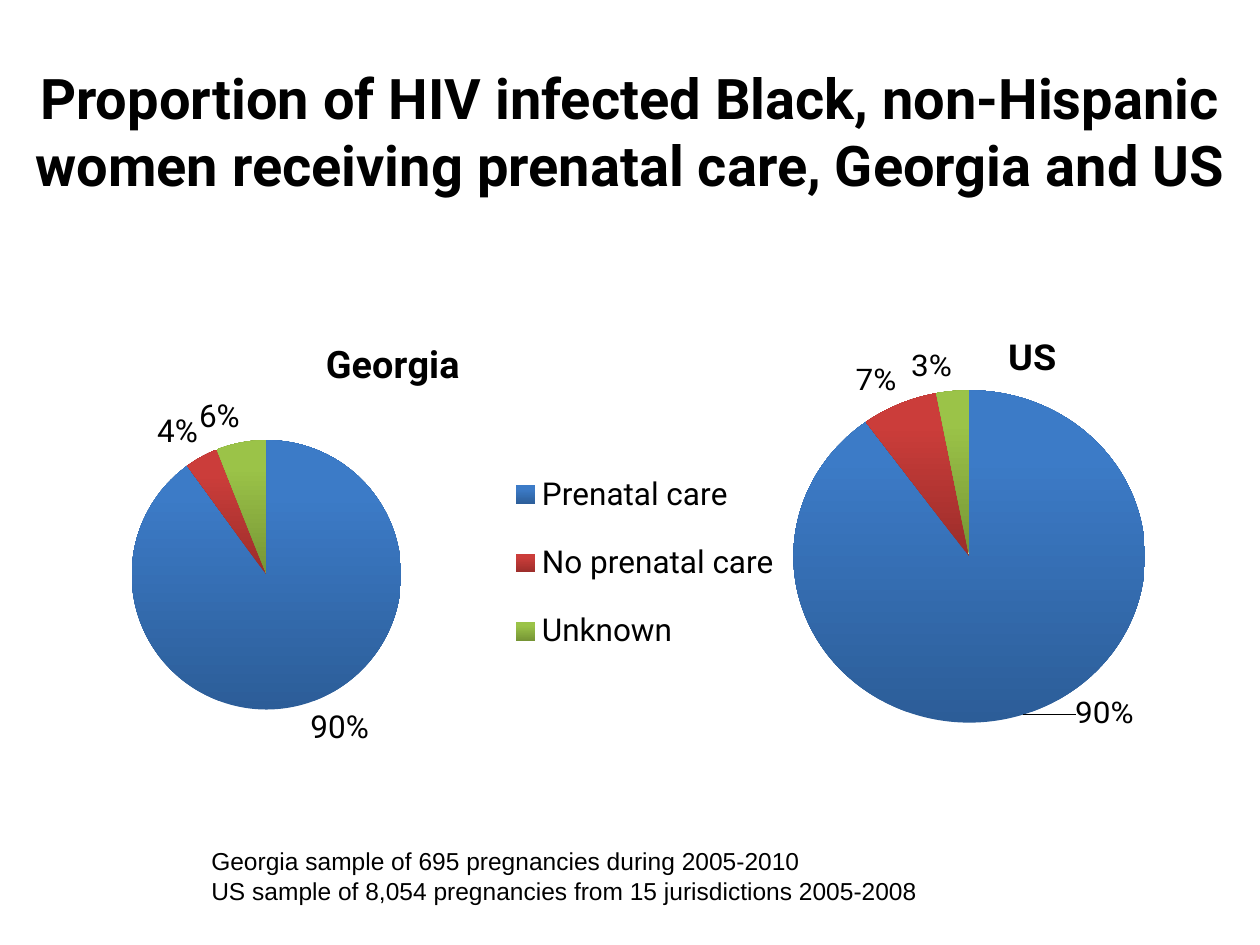
from lxml import etree
from pptx import Presentation
from pptx import util as u
from pptx.chart.data import CategoryChartData
from pptx.dml.color import RGBColor
from pptx.enum import chart as ch, text
from pptx.oxml import parse_xml
from pptx.oxml.ns import nsdecls, qn

BLACK = RGBColor(0, 0, 0)
# Dark and light ends of each slice's gradient
SLICES = (
    (RGBColor(0x2C, 0x5D, 0x98), RGBColor(0x3C, 0x7B, 0xC7)),
    (RGBColor(0x9B, 0x2D, 0x2A), RGBColor(0xCB, 0x3D, 0x3A)),
    (RGBColor(0x76, 0x95, 0x35), RGBColor(0x9B, 0xC3, 0x48)),
)


def style(obj, **vals):
    for key, val in vals.items():
        setattr(obj, key, val)


def ink(font, **vals):
    style(font, **vals)
    font.color.rgb = BLACK


def add_text(slide, box, lines, size, face, bold=False, **frame):
    """Text box with one paragraph for each line."""
    tf = slide.shapes.add_textbox(*map(u.Cm, box)).text_frame
    style(tf, word_wrap=True, **frame)
    for i, line in enumerate(lines):
        para = tf.add_paragraph() if i else tf.paragraphs[0]
        para.text = line
        ink(para.font, size=u.Pt(size), name=face, bold=bold)
    return tf


def layout(inner=False, **place):
    """Manual layout, in fractions of the chart."""
    node = parse_xml(f"<c:layout {nsdecls('c')}><c:manualLayout/></c:layout>")
    vals = {"layoutTarget": "inner"} if inner else {}
    vals.update({k + "Mode": "edge" for k in "xy"} if place.pop("edge", True) else {})
    vals.update(place)
    for key, val in vals.items():
        etree.SubElement(node[0], qn("c:" + key)).set("val", str(val))
    return node


def put(parent, index, node):
    for old in parent.findall(qn("c:layout")):
        parent.remove(old)
    parent.insert(index, node)


def add_pie(slide, box, name, cats, vals, plot, head, key=None, shift=None):
    """Pie chart; key places the legend, shift moves the first label."""
    data = CategoryChartData(number_format="General")
    data.categories = cats
    data.add_series(name, vals)
    chart = slide.shapes.add_chart(
        ch.XL_CHART_TYPE.PIE, *map(u.Cm, box), data).chart
    ink(chart.font, size=u.Pt(18), name="Roboto")

    # Heading
    chart.has_title = True
    para = chart.chart_title.text_frame.paragraphs[0]
    para.text = name
    ink(para.runs[0].font, size=u.Pt(21.6), name="Roboto", bold=True)
    put(chart.chart_title._element, 1, layout(**head))

    # Legend
    chart.has_legend = key is not None
    if key:
        style(chart.legend, position=ch.XL_LEGEND_POSITION.RIGHT,
              include_in_layout=False)
        put(chart.legend._element, 1, layout(**key))

    # Slices
    pie = chart.plots[0]
    pie.vary_by_categories = True
    put(pie._element.getparent(), 0, layout(inner=True, **plot))
    series = pie.series[0]
    for i, tones in enumerate(SLICES):
        fill = series.points[i].format.fill
        fill.gradient()
        fill.gradient_angle = 90
        for stop, tone, pos in zip(fill.gradient_stops, tones, (0, 0.8)):
            stop.color.rgb = tone
            stop.position = pos

    # Percent labels
    labels = series.data_labels
    style(labels, show_percentage=True, show_value=False,
          position=ch.XL_LABEL_POSITION.OUTSIDE_END)
    ink(labels.font, size=u.Pt(18), name="Roboto")
    if shift:
        label = parse_xml(f'<c:dLbl {nsdecls("c")}><c:idx val="0"/></c:dLbl>')
        label.append(layout(edge=False, **shift))
        for tag, val in (("dLblPos", "outEnd"), ("showLegendKey", 0),
                         ("showVal", 0), ("showCatName", 0),
                         ("showSerName", 0), ("showPercent", 1),
                         ("showBubbleSize", 0)):
            etree.SubElement(label, qn("c:" + tag)).set("val", str(val))
        labels._element.insert(0, label)
        lead = labels._element.find(qn("c:showLeaderLines"))
        if lead is None:
            lead = etree.SubElement(labels._element, qn("c:showLeaderLines"))
        lead.set("val", "1")


def main():
    prs = Presentation()
    style(prs, slide_width=u.Cm(25.4), slide_height=u.Cm(19.05))
    slide = prs.slides.add_slide(prs.slide_layouts[6])

    # Title
    title = add_text(
        slide, (0.43, 1.27, 24.56, 2.74),
        ["Proportion of HIV infected Black, non-Hispanic women receiving "
         "prenatal care, Georgia and US"],
        32, "Roboto", bold=True, margin_left=0, margin_right=0,
        vertical_anchor=text.MSO_ANCHOR.MIDDLE)
    title.paragraphs[0].alignment = text.PP_ALIGN.CENTER

    # Charts
    add_pie(slide, (0.84, 5.92, 15.11, 9.53), "Georgia",
            ("Prenatal care", "No prenatal care", "Unknown"), (90, 4, 6),
            plot=dict(x=0.12, y=0.31, w=0.36, h=0.57),
            head=dict(x=0.37, y=0.08),
            key=dict(x=0.62, y=0.32, w=0.37, h=0.5))
    add_pie(slide, (14.81, 6.15, 9.96, 9.09), "US",
            ("1", "2", "3"), (90, 7, 3),
            plot=dict(x=0.11, y=0.2, w=0.73, h=0.78),
            head=dict(x=0.54, y=0.05),
            shift=dict(x=0.1, y=-0.05))

    # Sample notes
    add_text(slide, (4.01, 16.94, 20.09, 1.45),
             ["Georgia sample of 695 pregnancies during 2005-2010",
              "US sample of 8,054 pregnancies from 15 jurisdictions 2005-2008"],
             14, "Arial")

    prs.save("out.pptx")


if __name__ == "__main__":
    main()
